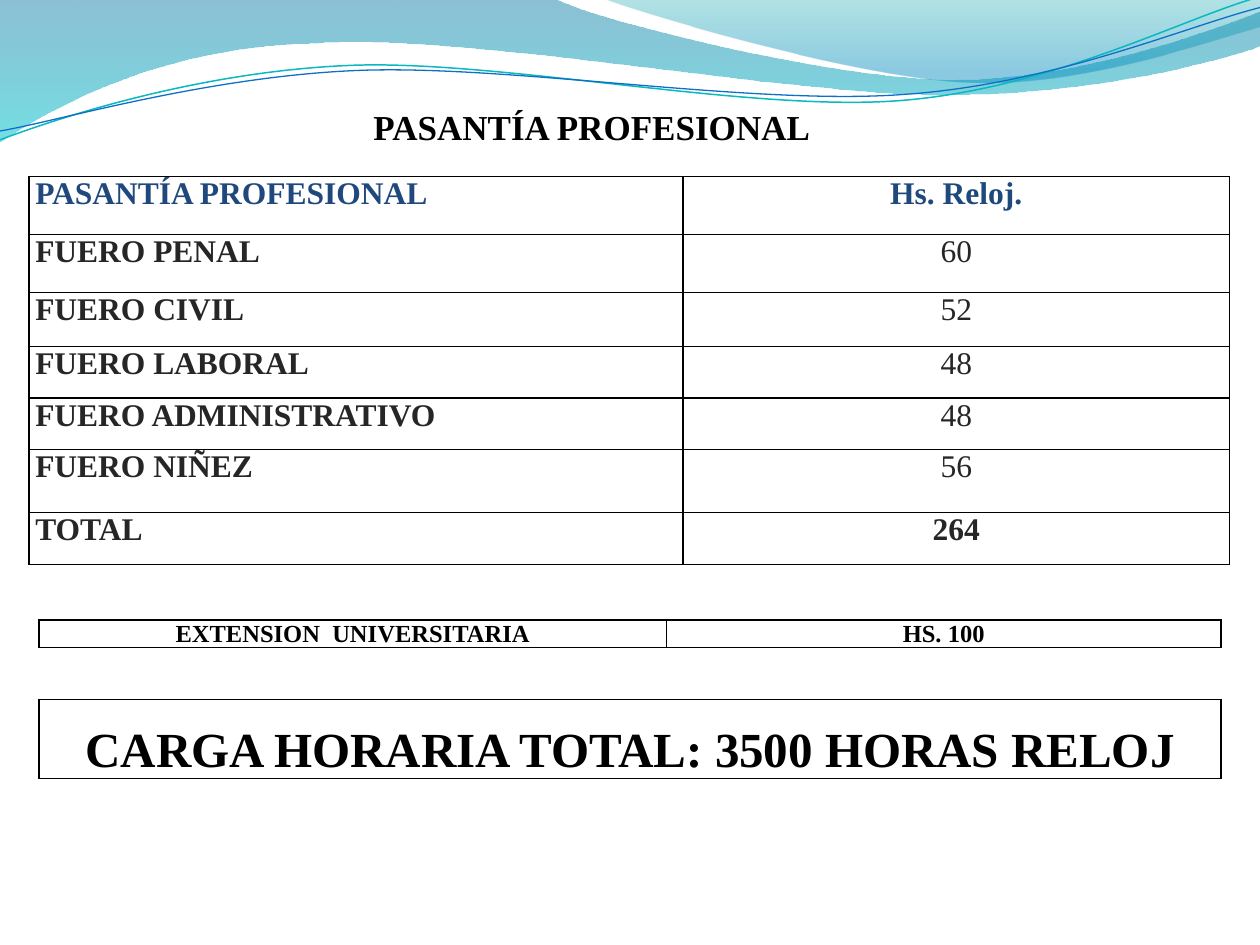
from lxml.etree import SubElement
from pptx import Presentation
from pptx.dml.color import RGBColor
from pptx.enum.text import MSO_ANCHOR, PP_ALIGN
from pptx.oxml import parse_xml
from pptx.oxml.ns import nsdecls, qn
from pptx.util import Inches, Pt

FONT = "Times New Roman"
BLACK, NAVY, CHARCOAL = "000000", "1F497D", "262626"


def style_run(run, size, bold, color):
    run.font.name = FONT
    run.font.size = Pt(size)
    run.font.bold = bold
    run.font.color.rgb = RGBColor.from_string(color)


def draw_wave(shapes, start, segments, close):
    points = [pair for segment in segments for pair in zip(segment[0::2], segment[1::2])]
    builder = shapes.build_freeform(Inches(start[0]), Inches(start[1]))
    builder.add_line_segments([(Inches(x), Inches(y)) for x, y in points], close=close)
    shape = builder.convert_to_shape()
    shape.shadow.inherit = False
    steps = iter(list(shape._element.iter(qn("a:lnTo"))))
    for segment in segments:
        step = next(steps)
        if len(segment) == 6:
            step.tag = qn("a:cubicBezTo")
            for _ in range(2):
                control = next(steps)
                step.append(control[0])
                control.getparent().remove(control)
    return shape


presentation = Presentation()
presentation.slide_width = Inches(10)
presentation.slide_height = Inches(7.5)
slide = presentation.slides.add_slide(presentation.slide_layouts[6])
shapes = slide.shapes

bands = [
    ((0, 0),
     [(4.4, -0.01), (4.76, 0.17, 6.64, 0.63, 7.58, 0.63), (8.53, 0.63, 9.58, 0.26, 10, 0.09),
      (10.01, 0.36), (9.83, 0.44, 8.7, 0.76, 7.46, 0.75), (6.22, 0.75, 3.82, 0.28, 2.57, 0.34),
      (1.29, 0.36, 0.46, 0.83, -0.01, 1.13)],
     [(0, "0074A1", 45), (1, "00C6CF", 55)]),
    ((4.79, -0.01),
     [(5.09, 0.11, 6.82, 0.62, 7.69, 0.65), (8.56, 0.69, 9.61, 0.32, 10, 0.21), (10, 0)],
     [(0, "00A1A9", 30), (0.8, "008BBF", 45)]),
]
for start, segments, stops in bands:
    band = draw_wave(shapes, start, segments, True)
    band.line.fill.background()
    band.fill.gradient()
    band.fill.gradient_angle = 270
    for gradient_stop, (position, color, opacity) in zip(band.fill.gradient_stops, stops):
        gradient_stop.position = position
        gradient_stop.color.rgb = RGBColor.from_string(color)
    for element, stop in zip(band._element.spPr.iter(qn("a:srgbClr")), stops):
        SubElement(element, qn("a:alpha"), val=str(stop[2] * 1000))

threads = [
    ((0, 1.11),
     [(0.48, 0.93, 1.58, 0.57, 2.77, 0.52), (3.95, 0.47, 5.93, 0.89, 7.13, 0.8),
      (8.33, 0.71, 9.38, 0.15, 9.98, -0.02)], "0AB8BF", 0.85),
    ((0, 1.04),
     [(0.47, 0.96, 1.64, 0.61, 2.83, 0.56), (4.03, 0.51, 5.97, 0.84, 7.17, 0.75),
      (8.36, 0.67, 9.41, 0.21, 10, 0.06)], "0F6FC6", 0.75),
]
for start, segments, color, width in threads:
    thread = draw_wave(shapes, start, segments, False)
    thread.fill.background()
    thread.line.color.rgb = RGBColor.from_string(color)
    thread.line.width = Pt(width)

LEFT, CENTER = PP_ALIGN.LEFT, PP_ALIGN.CENTER
TOP, MIDDLE, BOTTOM = MSO_ANCHOR.TOP, MSO_ANCHOR.MIDDLE, MSO_ANCHOR.BOTTOM
hours = [("FUERO PENAL", "60"), ("FUERO CIVIL", "52"), ("FUERO LABORAL", "48"),
         ("FUERO ADMINISTRATIVO", "48"), ("FUERO NIÑEZ", "56")]
internship = [[("PASANTÍA PROFESIONAL", LEFT, True, NAVY), ("Hs. Reloj.", CENTER, True, NAVY)]]
internship += [[(name, LEFT, True, CHARCOAL), (value, CENTER, False, CHARCOAL)]
               for name, value in hours]
internship += [[("TOTAL", LEFT, True, CHARCOAL), ("264", CENTER, True, CHARCOAL)]]
extension = [[("EXTENSION  UNIVERSITARIA", CENTER, True, BLACK), ("HS. 100", CENTER, True, BLACK)]]
total_load = [[("CARGA HORARIA TOTAL: 3500 HORAS RELOJ", CENTER, True, BLACK)]]

tables = [
    (0.23, 1.4, [5.19, 4.34], [0.46, 0.46, 0.43, 0.41, 0.41, 0.5, 0.41],
     internship, 18, 0.05, 0, TOP),
    (0.31, 4.92, [4.98, 4.4], [0.22], extension, 14, 0.07, 0, BOTTOM),
    (0.31, 5.55, [9.38], [0.63], total_load, 28, 0.07, 0.19, MIDDLE),
]
for left, top, columns, rows, content, size, side_margin, top_margin, anchor in tables:
    frame = shapes.add_table(len(rows), len(columns), Inches(left), Inches(top),
                             Inches(sum(columns)), Inches(sum(rows)))
    table = frame.table
    table.first_row = table.horz_banding = False
    for column, width in zip(table.columns, columns):
        column.width = Inches(width)
    for row, height, entries in zip(table.rows, rows, content):
        row.height = Inches(height)
        for cell, (text, alignment, bold, color) in zip(row.cells, entries):
            cell.margin_left = cell.margin_right = Inches(side_margin)
            cell.margin_top, cell.margin_bottom = Inches(top_margin), 0
            cell.vertical_anchor = anchor
            cell.fill.background()
            cell.text_frame.text = text
            paragraph = cell.text_frame.paragraphs[0]
            paragraph.alignment = alignment
            style_run(paragraph.runs[0], size, bold, color)
            properties = cell._tc.get_or_add_tcPr()
            for index, edge in enumerate(("lnL", "lnR", "lnT", "lnB")):
                properties.insert(index, parse_xml(
                    f'<a:{edge} {nsdecls("a")} w="{Pt(1)}"><a:solidFill>'
                    f'<a:srgbClr val="{BLACK}"/></a:solidFill></a:{edge}>'))

title = shapes.add_textbox(Inches(1.56), Inches(0.78), Inches(6.33), Inches(0.74))
title.text_frame.word_wrap = True
title.text_frame.margin_top = Inches(0.06)
title.text_frame.text = "PASANTÍA PROFESIONAL "
paragraph = title.text_frame.paragraphs[0]
paragraph.alignment = CENTER
style_run(paragraph.runs[0], 20, True, BLACK)

presentation.save("out.pptx")
